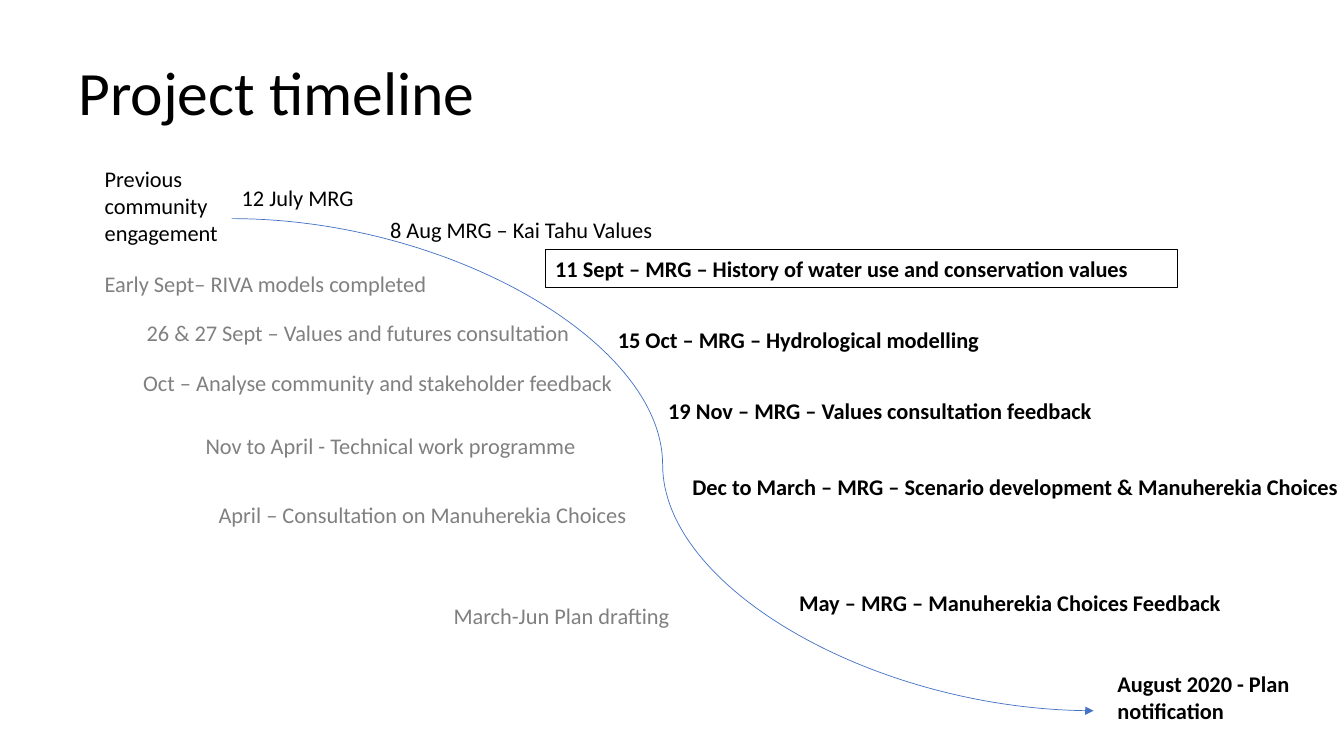
import pptx
import pptx.dml.color
import pptx.enum.shapes
import pptx.enum.text
import pptx.oxml.ns
import pptx.util
from dataclasses import dataclass
from lxml import etree

Cm = pptx.util.Cm
Pt = pptx.util.Pt
Align = pptx.enum.text.PP_ALIGN
Anchor = pptx.enum.text.MSO_ANCHOR


@dataclass(frozen=True)
class Theme:
    font: str = "Calibri"
    title_size: float = 44
    label_size: float = 16
    ink: str = "000000"
    muted: str = "808080"
    curve: str = "4472C4"
    curve_width: float = 0.5
    frame_width: float = 0.75


@dataclass(frozen=True)
class Label:
    """A text on the timeline; left, top, width and height are in cm."""
    text: str
    left: float
    top: float
    width: float
    height: float = 0.94
    wrap: bool = False
    right: bool = False
    framed: bool = False


THEME = Theme()

# Boxes: left, top, width, height in cm
TITLE_BOX = (1.73, 0.56, 29.21, 3.68)
TIMELINE_BOX = (1.6, 4, 32.27, 14.4)
CURVE_BOX = (4.24, 1.51, 21.72, 12.4)  # inside the timeline

PAST_EVENTS = [
    Label("Previous\ncommunity\nengagement", 0.79, 0.04, 3.45, 2.31, wrap=True),
    Label("12 July MRG", 4.24, 0.52, 3.38),
    Label("8 Aug MRG – Kai Tahu Values", 7.98, 1.31, 8.08, wrap=True),
]
WORK_STEPS = [
    Label("Early Sept– RIVA models completed", 0.79, 2.68, 9.17),
    Label("26 & 27 Sept – Values and futures consultation",
          0.58, 3.92, 12.42, wrap=True, right=True),
    Label("Oct – Analyse community and stakeholder feedback",
          0.03, 5.17, 14.05, wrap=True, right=True),
    Label("Nov to April - Technical work programme", 3.33, 6.77, 15.65, wrap=True),
    Label("April – Consultation on Manuherekia Choices", 3.66, 8.5, 10.9, wrap=True),
    Label("March-Jun Plan drafting", 9.58, 11.04, 6.02),
]
COMING_MEETINGS = [
    Label("11 Sept – MRG – History of water use and conservation values",
          12.14, 2.3, 15.93, wrap=True, framed=True),
    Label("15 Oct – MRG – Hydrological modelling", 13.72, 4.1, 9.88),
    Label("19 Nov – MRG – Values consultation feedback", 14.99, 5.88, 11.33),
    Label("Dec to March – MRG – Scenario development & Manuherekia Choices",
          15.6, 7.81, 16.99),
    Label("May – MRG – Manuherekia Choices Feedback", 18.29, 10.71, 11.28),
    Label("August 2020 - Plan notification", 26.31, 12.76, 5.21, 1.63, wrap=True),
]


def rgb(value):
    return pptx.dml.color.RGBColor.from_string(value)


def add_text(slide, box, text, size, color, bold=False, wrap=True, align=Align.LEFT):
    shape = slide.shapes.add_textbox(*map(Cm, box))
    frame = shape.text_frame
    frame.word_wrap = wrap
    frame.text = text
    for paragraph in frame.paragraphs:
        paragraph.alignment = align
        paragraph.font.name = THEME.font
        paragraph.font.size = Pt(size)
        paragraph.font.bold = bold
        paragraph.font.color.rgb = rgb(color)
    return shape


def add_title(slide, box):
    shape = add_text(slide, box, "Project timeline", THEME.title_size, THEME.ink)
    shape.text_frame.vertical_anchor = Anchor.MIDDLE
    shape.text_frame.paragraphs[0].line_spacing = 0.9


def add_curve(slide, box):
    left, top, width, height = box
    curve = slide.shapes.add_connector(
        pptx.enum.shapes.MSO_CONNECTOR.CURVE,
        Cm(left), Cm(top), Cm(left + width), Cm(top + height))
    curve.line.color.rgb = rgb(THEME.curve)
    curve.line.width = Pt(THEME.curve_width)
    # Arrowhead at the end, and no shadow
    properties = curve._element.spPr
    line = properties.find(pptx.oxml.ns.qn("a:ln"))
    etree.SubElement(line, pptx.oxml.ns.qn("a:tailEnd"), type="triangle")
    etree.SubElement(properties, pptx.oxml.ns.qn("a:effectLst"))


def add_labels(slide, origin, labels, color, bold=False):
    left, top = origin
    for label in labels:
        box = (left + label.left, top + label.top, label.width, label.height)
        shape = add_text(slide, box, label.text, THEME.label_size, color, bold,
                         label.wrap, Align.RIGHT if label.right else Align.LEFT)
        shape.text_frame.auto_size = pptx.enum.text.MSO_AUTO_SIZE.SHAPE_TO_FIT_TEXT
        if label.framed:
            shape.line.color.rgb = rgb(THEME.ink)
            shape.line.width = Pt(THEME.frame_width)


def add_timeline(slide, box):
    left, top = origin = box[:2]
    curve_left, curve_top, width, height = CURVE_BOX
    add_curve(slide, (left + curve_left, top + curve_top, width, height))
    add_labels(slide, origin, PAST_EVENTS, THEME.ink)
    add_labels(slide, origin, WORK_STEPS, THEME.muted)
    add_labels(slide, origin, COMING_MEETINGS, THEME.ink, bold=True)


def main():
    presentation = pptx.Presentation()
    presentation.slide_width = Cm(33.87)
    presentation.slide_height = Cm(19.05)
    slide = presentation.slides.add_slide(presentation.slide_layouts[6])
    add_title(slide, TITLE_BOX)
    add_timeline(slide, TIMELINE_BOX)
    presentation.save("out.pptx")


if __name__ == "__main__":
    main()
